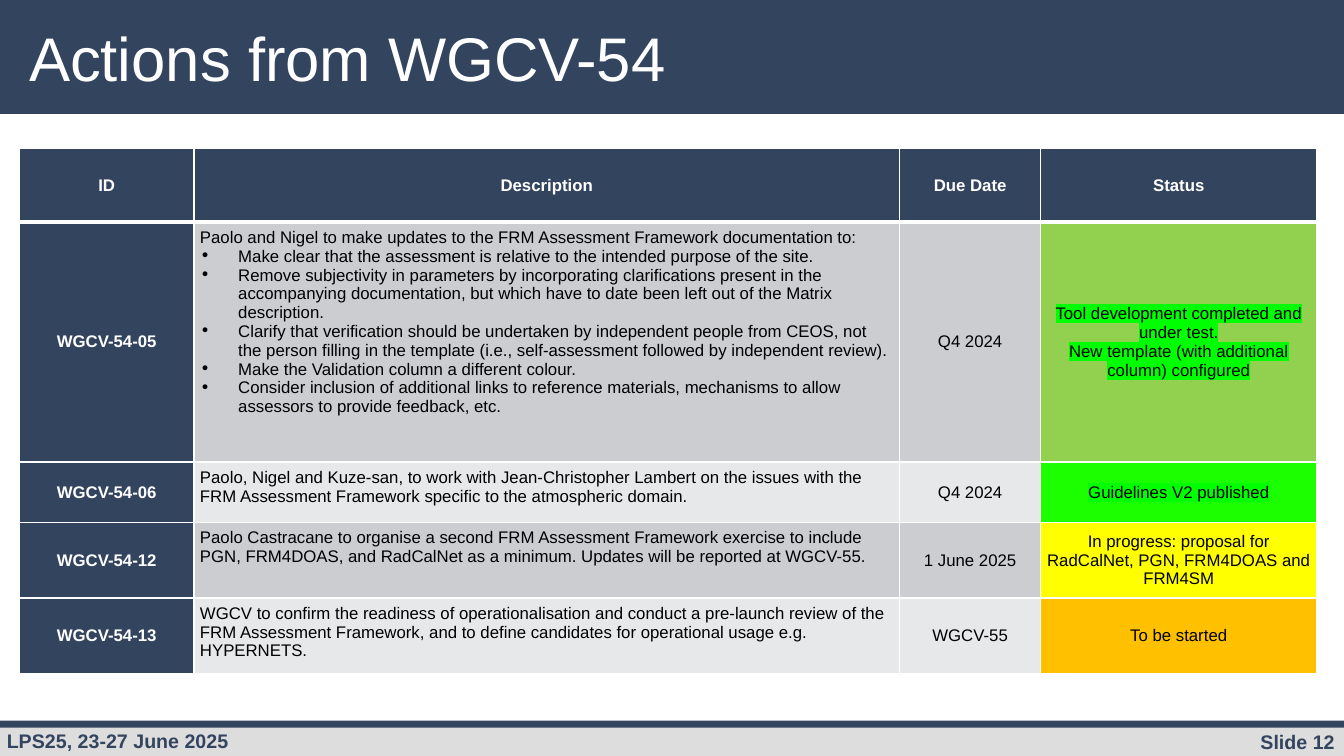
from lxml.etree import SubElement
from pptx import Presentation
from pptx.dml.color import RGBColor
from pptx.enum.shapes import MSO_SHAPE
from pptx.enum.text import MSO_ANCHOR, PP_ALIGN
from pptx.oxml.ns import qn
from pptx.util import Inches, Pt

COLOURS = {
    "navy": "33445F", "footer": "DDDDDD", "white": "FFFFFF", "black": "000000",
    "dark band": "CCCDD1", "light band": "E7E8E9", "highlight": "00FF00",
    "completed": "92D050", "published": "1BFF00", "in progress": "FFFF00",
    "to start": "FFC000",
}

HEADINGS = ["ID", "Description", "Due Date", "Status"]

# Each action: ID, description lines (bullets after the first), date, status lines, status colour, highlighted
ACTIONS = [
    ("WGCV-54-05",
     ["Paolo and Nigel to make updates to the FRM Assessment Framework documentation to:",
      "Make clear that the assessment is relative to the intended purpose of the site.",
      "Remove subjectivity in parameters by incorporating clarifications present in the accompanying "
      "documentation, but which have to date been left out of the Matrix description.",
      "Clarify that verification should be undertaken by independent people from CEOS, not the person "
      "filling in the template (i.e., self-assessment followed by independent review).",
      "Make the Validation column a different colour.",
      "Consider inclusion of additional links to reference materials, mechanisms to allow assessors "
      "to provide feedback, etc."],
     "Q4 2024",
     ["Tool development completed and under test.",
      "New template (with additional column) configured"],
     "completed", True),
    ("WGCV-54-06",
     ["Paolo, Nigel and Kuze-san, to work with Jean-Christopher Lambert on the issues with the "
      "FRM Assessment Framework specific to the atmospheric domain."],
     "Q4 2024", ["Guidelines V2 published"], "published", True),
    ("WGCV-54-12",
     ["Paolo Castracane to organise a second FRM Assessment Framework exercise to include PGN, "
      "FRM4DOAS, and RadCalNet as a minimum. Updates will be reported at WGCV-55."],
     "1 June 2025", ["In progress: proposal for RadCalNet, PGN, FRM4DOAS and FRM4SM"],
     "in progress", False),
    ("WGCV-54-13",
     ["WGCV to confirm the readiness of operationalisation and conduct a pre-launch review of the "
      "FRM Assessment Framework, and to define candidates for operational usage e.g. HYPERNETS."],
     "WGCV-55", ["To be started"], "to start", False),
]


def colour(name):
    return RGBColor.from_string(COLOURS[name])


class SlideBuilder:
    """Holds the style and the page; lengths are percentages of the slide's size."""

    font_name = "Arial"
    cell_size = 12
    cell_margin = Inches(0.06)
    bullet_indent = Inches(0.38)

    def __init__(self, deck):
        self.column = deck.slide_width / 100
        self.row = deck.slide_height / 100
        self.page = deck.slides.add_slide(deck.slide_layouts[6])

    def area(self, left, top, width, height):
        return (round(left * self.column), round(top * self.row),
                round(width * self.column), round(height * self.row))

    def band(self, left, top, width, height, fill):
        shape = self.page.shapes.add_shape(MSO_SHAPE.RECTANGLE, *self.area(left, top, width, height))
        shape.shadow.inherit = False
        shape.fill.solid()
        shape.fill.fore_color.rgb = colour(fill)
        shape.line.fill.background()

    def style(self, para, size, ink, bold, align):
        para.alignment = align
        para.font.name = self.font_name
        para.font.size = Pt(size)
        para.font.bold = bold
        para.font.color.rgb = colour(ink)

    def text(self, left, top, width, height, words, size, ink, bold=False,
             align=PP_ALIGN.LEFT, anchor=MSO_ANCHOR.TOP, spacing=1.0):
        box = self.page.shapes.add_textbox(*self.area(left, top, width, height))
        frame = box.text_frame
        frame.word_wrap = True
        frame.vertical_anchor = anchor
        para = frame.paragraphs[0]
        para.text = words
        para.line_spacing = spacing
        self.style(para, size, ink, bold, align)

    def table(self, left, top, widths, heights):
        frame = self.page.shapes.add_table(
            len(heights), len(widths), *self.area(left, top, sum(widths), sum(heights)))
        for column, width in zip(frame.table.columns, widths):
            column.width = round(width * self.column)
        for row, height in zip(frame.table.rows, heights):
            row.height = round(height * self.row)
        return frame.table

    def borders(self, cell, top, bottom):
        properties = cell._tc.get_or_add_tcPr()
        for side, points in (("L", 1), ("R", 1), ("T", top), ("B", bottom)):
            line = SubElement(properties, qn(f"a:ln{side}"), w=str(Pt(points)))
            solid = SubElement(line, qn("a:solidFill"))
            SubElement(solid, qn("a:srgbClr"), val=COLOURS["white"])

    def bullet(self, para):
        properties = para._p.get_or_add_pPr()
        properties.set("marL", str(self.bullet_indent))
        properties.set("indent", str(-self.bullet_indent))
        bullet_colour = SubElement(properties, qn("a:buClr"))
        SubElement(bullet_colour, qn("a:srgbClr"), val=COLOURS["black"])
        SubElement(properties, qn("a:buChar"), char="∙")

    def cell(self, cell, lines, fill, ink="black", bold=False, align=PP_ALIGN.CENTER,
             anchor=MSO_ANCHOR.MIDDLE, top=1, bottom=1, bulleted=False, highlighted=False):
        self.borders(cell, top, bottom)
        cell.fill.solid()
        cell.fill.fore_color.rgb = colour(fill)
        cell.vertical_anchor = anchor
        cell.margin_left = cell.margin_right = self.cell_margin
        cell.margin_top = cell.margin_bottom = self.cell_margin
        frame = cell.text_frame
        for index, words in enumerate(lines):
            para = frame.add_paragraph() if index else frame.paragraphs[0]
            span = para.add_run()
            span.text = words
            if bulleted and index:
                self.bullet(para)
            self.style(para, self.cell_size, ink, bold, align)
            if highlighted:
                marker = SubElement(span._r.get_or_add_rPr(), qn("a:highlight"))
                SubElement(marker, qn("a:srgbClr"), val=COLOURS["highlight"])


def main():
    deck = Presentation()
    deck.slide_width, deck.slide_height = Inches(13.33), Inches(7.5)
    builder = SlideBuilder(deck)

    # Header and footer
    builder.band(0, 0, 100, 15.07, "navy")
    builder.band(0, 95.87, 100, 4.13, "footer")
    builder.band(0, 95.33, 100, 0.93, "navy")
    builder.text(84.25, 95.87, 15.8, 4.53, "Slide 12", 14, "navy", True, PP_ALIGN.RIGHT)
    builder.text(-0.23, 95.73, 40.44, 4.53, "LPS25, 23-27 June 2025", 14, "navy", True)
    builder.text(1.43, 2.53, 77.04, 11.33, "Actions from WGCV-54", 44, "white",
                 anchor=MSO_ANCHOR.MIDDLE, spacing=0.9)

    # Table of actions
    table = builder.table(1.45, 19.65, [12.98, 52.51, 10.5, 20.55], [9.73, 31.73, 8, 10, 10])
    for index, heading in enumerate(HEADINGS):
        builder.cell(table.cell(0, index), [heading], "navy", "white", True, bottom=3)
    for row, (name, description, due, status, state, highlighted) in enumerate(ACTIONS, 1):
        band = "dark band" if row % 2 else "light band"
        top = 3 if row == 1 else 1
        builder.cell(table.cell(row, 0), [name], "navy", "white", True, top=top)
        builder.cell(table.cell(row, 1), description, band, align=PP_ALIGN.LEFT,
                     anchor=MSO_ANCHOR.TOP, top=top, bulleted=True)
        builder.cell(table.cell(row, 2), [due], band, top=top)
        builder.cell(table.cell(row, 3), status, state, top=top, highlighted=highlighted)

    deck.save("out.pptx")


if __name__ == "__main__":
    main()
